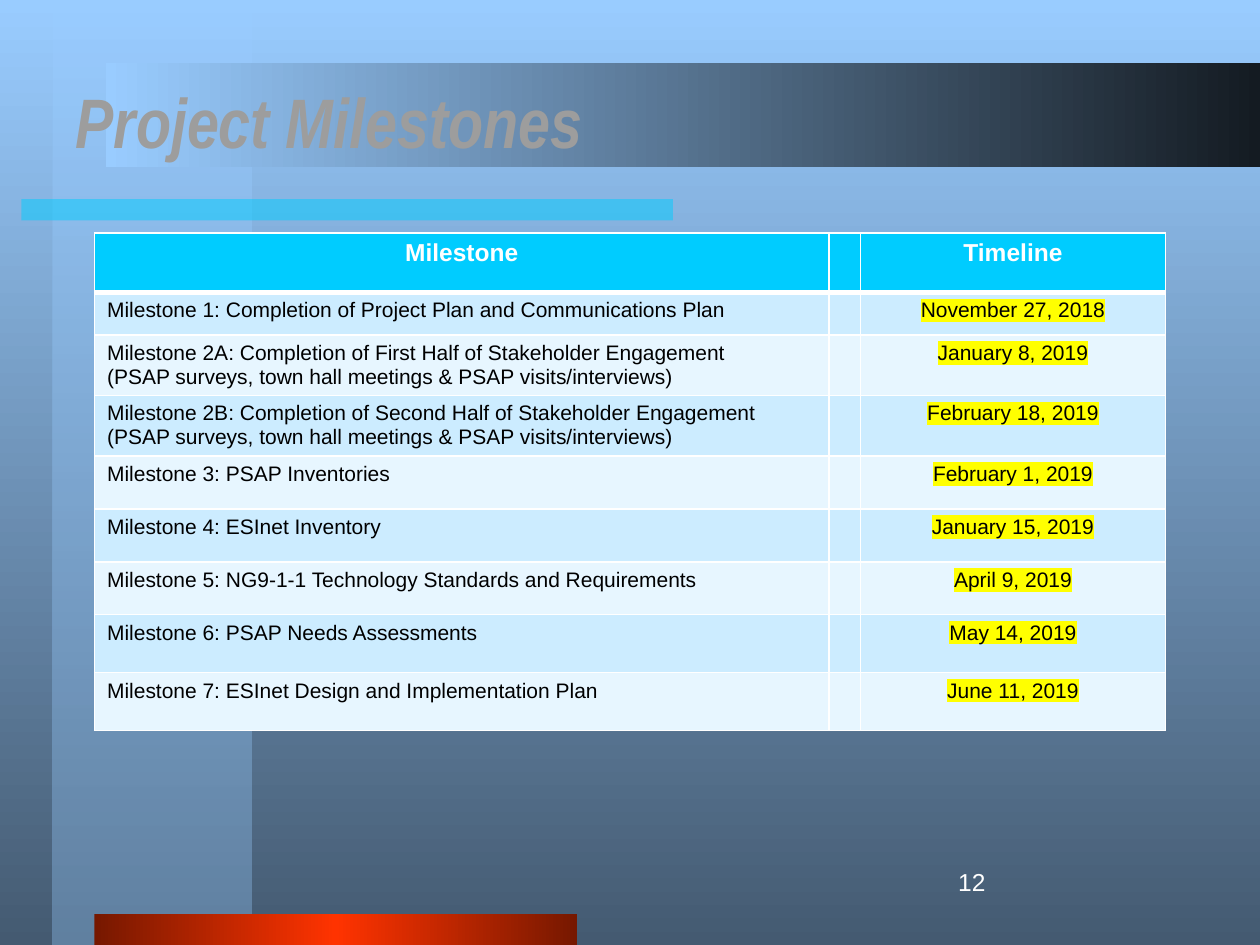
from lxml.etree import SubElement
from pptx import Presentation
from pptx.dml.color import RGBColor
from pptx.enum.shapes import MSO_SHAPE as Shape
from pptx.enum.text import MSO_ANCHOR as Anchor, PP_ALIGN as Align
from pptx.oxml.ns import qn
from pptx.util import Inches, Pt

# Content
TITLE = "Project Milestones"
PAGE_NUMBER = "12"
HEADERS = ("Milestone", "Timeline")
SURVEYS = "(PSAP surveys, town hall meetings & PSAP visits/interviews)"
MILESTONES = [
    (["Milestone 1: Completion of Project Plan and Communications Plan"], "November 27, 2018"),
    (["Milestone 2A: Completion of First Half of Stakeholder Engagement", SURVEYS], "January 8, 2019"),
    (["Milestone 2B: Completion of Second Half of Stakeholder Engagement", SURVEYS], "February 18, 2019"),
    (["Milestone 3: PSAP Inventories"], "February 1, 2019"),
    (["Milestone 4: ESInet Inventory"], "January 15, 2019"),
    (["Milestone 5: NG9-1-1 Technology Standards and Requirements"], "April 9, 2019"),
    (["Milestone 6: PSAP Needs Assessments"], "May 14, 2019"),
    (["Milestone 7: ESInet Design and Implementation Plan"], "June 11, 2019"),
]
COLUMN_WIDTHS = (5.83, 0.25, 2.42)
ROW_HEIGHTS = (0.47, 0.34, 0.48, 0.48, 0.42, 0.42, 0.42, 0.46, 0.46)

# Colours
SKY, CYAN, WHITE, BLACK = "99CCFF", "00CCFF", "FFFFFF", "000000"
BANDS = ("CCECFF", "E7F6FF")
ACROSS, DOWN = 0, 270

# Bars: left, top, width, height, gradient colours, angle, opacity
BARS = [
    (0.42, 0, 1.58, 7.5, (SKY, "7CA6CF"), DOWN, 50),
    (0.17, 1.58, 5.17, 0.17, (CYAN,), ACROSS, 50),
    (0.75, 7.25, 3.83, 0.25, ("761800", "FF3300", "761800"), ACROSS, 100),
    (0.84, 0.5, 9.16, 0.83, (SKY, "141B22"), ACROSS, 100),
]


def rgb(color):
    return RGBColor.from_string(color)


def add_color(parent, color, opacity=100):
    element = SubElement(parent, qn("a:srgbClr"), val=color)
    if opacity < 100:
        SubElement(element, qn("a:alpha"), val=str(opacity * 1000))


def paint(fill, owner, colors, angle, opacity=100):
    """Fill with one colour, or with a gradient of evenly spaced colours."""
    if len(colors) == 1:
        fill.solid()
        fill.fore_color.rgb = rgb(colors[0])
        solid = next(owner.iter(qn("a:solidFill")))
        solid.clear()
        add_color(solid, colors[0], opacity)
        return
    fill.gradient()
    fill.gradient_angle = angle
    stops = next(owner.iter(qn("a:gsLst")))
    stops.clear()
    for index, color in enumerate(colors):
        position = index * 100000 // (len(colors) - 1)
        add_color(SubElement(stops, qn("a:gs"), pos=str(position)), color, opacity)


def add_run(paragraph, text, size, color, name="Arial", bold=False, highlight=None):
    run = paragraph.add_run()
    run.text = text
    font = run.font
    font.size, font.bold = Pt(size), bold
    font.color.rgb = rgb(color)
    if highlight:
        add_color(SubElement(run._r.get_or_add_rPr(), qn("a:highlight")), highlight)
    font.name = name
    return run


def set_borders(cell, **widths):
    properties = cell._tc.get_or_add_tcPr()
    for index, side in enumerate(("L", "R", "T", "B")):
        line = properties.makeelement(qn(f"a:ln{side}"), {"w": str(Pt(widths.get(side, 1)))})
        add_color(SubElement(line, qn("a:solidFill")), WHITE)
        properties.insert(index, line)


def fill_cell(cell, lines, align, size, color, **style):
    for index, line in enumerate(lines):
        frame = cell.text_frame
        paragraph = frame.add_paragraph() if index else frame.paragraphs[0]
        paragraph.alignment = align
        add_run(paragraph, line, size, color, **style)
    if not lines:
        SubElement(cell.text_frame.paragraphs[0]._p, qn("a:endParaRPr"), sz=str(size * 100))


presentation = Presentation()
presentation.slide_width, presentation.slide_height = Inches(10), Inches(7.5)
slide = presentation.slides.add_slide(presentation.slide_layouts[5])

# Background and bars
paint(slide.background.fill, slide._element, (SKY, "445A71"), DOWN)
for left, top, width, height, colors, angle, opacity in BARS:
    bar = slide.shapes.add_shape(
        Shape.RECTANGLE, Inches(left), Inches(top), Inches(width), Inches(height))
    bar.shadow.inherit = False
    bar.line.fill.background()
    paint(bar.fill, bar._element.spPr, colors, angle, opacity)

# Title, in front of the bars
title = slide.shapes.title
title.left, title.top, title.width, title.height = map(Inches, (0.5, 0.33, 8, 1.25))
title.text_frame.vertical_anchor = Anchor.MIDDLE
heading = title.text_frame.paragraphs[0]
heading.alignment = Align.LEFT
add_run(heading, TITLE, 40, "9D9D9D", "Arial Narrow", bold=True).font.italic = True
slide.shapes._spTree.append(title._element)

# Milestone table
table = slide.shapes.add_table(
    len(ROW_HEIGHTS), len(COLUMN_WIDTHS), Inches(0.75), Inches(1.85),
    Inches(sum(COLUMN_WIDTHS)), Inches(sum(ROW_HEIGHTS))).table
for column, width in zip(table.columns, COLUMN_WIDTHS):
    column.width = Inches(width)
for row, height in zip(table.rows, ROW_HEIGHTS):
    row.height = Inches(height)

rows = [([HEADERS[0]], HEADERS[1])] + MILESTONES
for row_index, (lines, timeline) in enumerate(rows):
    is_header = row_index == 0
    size, color = (14, WHITE) if is_header else (12, BLACK)
    for column_index, content in enumerate((lines, [], [timeline])):
        cell = table.cell(row_index, column_index)
        cell.fill.solid()
        cell.fill.fore_color.rgb = rgb(CYAN if is_header else BANDS[(row_index - 1) % 2])
        set_borders(cell, B=3 if is_header else 1, T=3 if row_index == 1 else 1)
        is_date = column_index == 2 and not is_header
        fill_cell(cell, content, Align.CENTER if is_header or is_date else Align.LEFT,
                  size, color, bold=is_header, highlight="FFFF00" if is_date else None)

# Page number
number = slide.shapes.add_textbox(Inches(6.67), Inches(6.75), Inches(1.25), Inches(0.5))
number.text_frame.word_wrap = False
number.text_frame.vertical_anchor = Anchor.MIDDLE
paragraph = number.text_frame.paragraphs[0]
paragraph.alignment = Align.RIGHT
add_run(paragraph, PAGE_NUMBER, 14, WHITE)

presentation.save("out.pptx")
